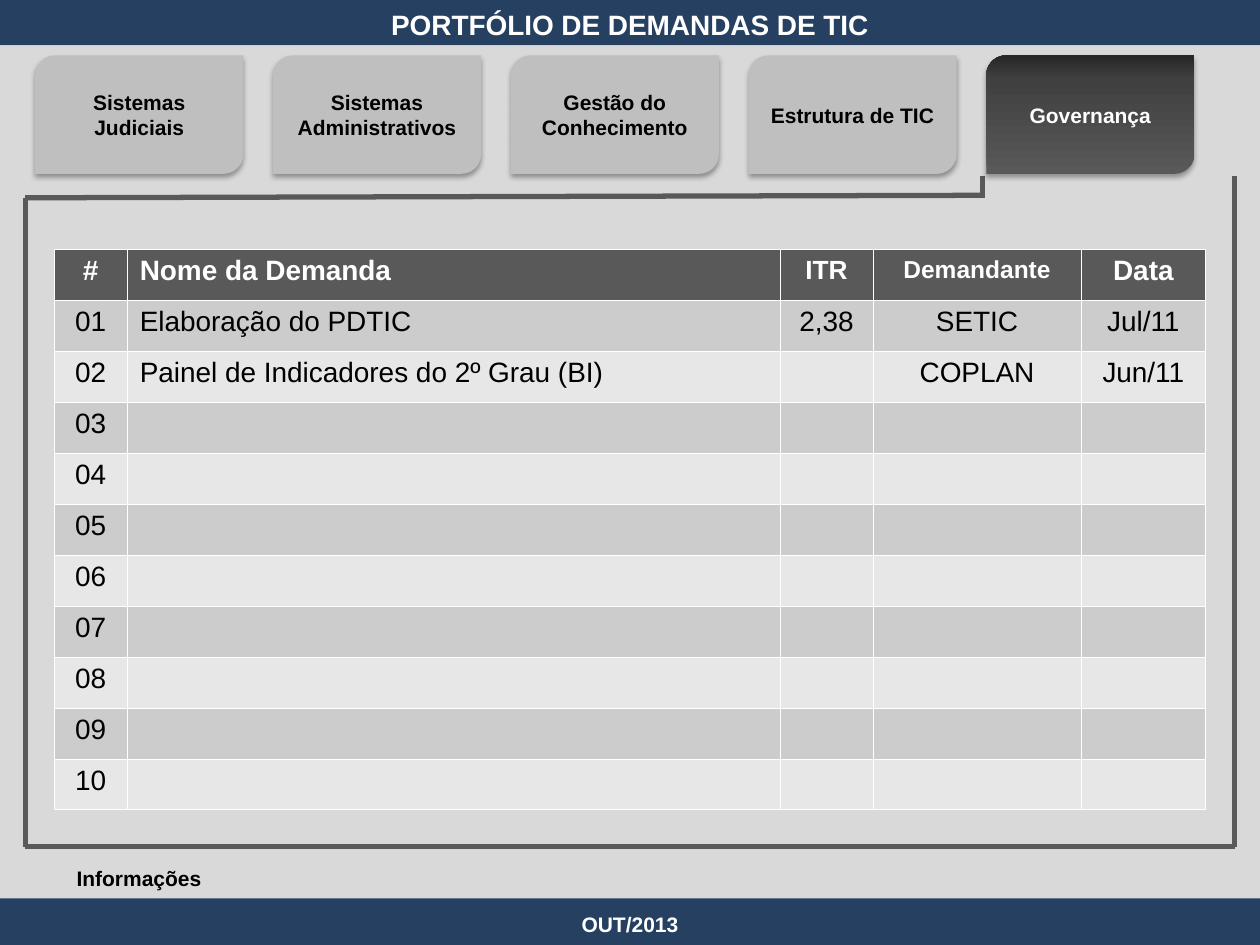
import collections
import pptx
import pptx.dml.color
import pptx.enum.shapes
import pptx.enum.text
import pptx.oxml
import pptx.oxml.ns
import pptx.util

RGBColor = pptx.dml.color.RGBColor
SHAPES = pptx.enum.shapes.MSO_SHAPE
LEFT = pptx.enum.text.PP_ALIGN.LEFT
CENTER = pptx.enum.text.PP_ALIGN.CENTER
TOP = pptx.enum.text.MSO_ANCHOR.TOP
MIDDLE = pptx.enum.text.MSO_ANCHOR.MIDDLE

NAVY = RGBColor(0x25, 0x40, 0x61)
PANEL_GREY = RGBColor(0xD9, 0xD9, 0xD9)
TAB_GREY = RGBColor(0xBF, 0xBF, 0xBF)
DARK_GREY = RGBColor(0x59, 0x59, 0x59)
DEEP_GREY = RGBColor(0x40, 0x40, 0x40)
NEAR_BLACK = RGBColor(0x26, 0x26, 0x26)
ODD_ROW = RGBColor(0xCC, 0xCC, 0xCC)
EVEN_ROW = RGBColor(0xE7, 0xE7, 0xE7)
WHITE = RGBColor(0xFF, 0xFF, 0xFF)
BLACK = RGBColor(0, 0, 0)

COLUMNS, ROWS = 100, 75
UNIT = pptx.util.Inches(10) / COLUMNS
Box = collections.namedtuple("Box", "left top width height")

TABS = ["Sistemas Judiciais", "Sistemas Administrativos", "Gestão do Conhecimento",
        "Estrutura de TIC", "Governança"]
HEADINGS = [("#", 16), ("Nome da Demanda", 16), ("ITR", 15), ("Demandante", 14), ("Data", 16)]
COLUMN_WIDTHS = [5.8, 51.8, 7.4, 16.5, 9.9]
DEMANDS = [["Elaboração do PDTIC", "2,38", "SETIC", "Jul/11"],
           ["Painel de Indicadores do 2º Grau (BI)", "", "COPLAN", "Jun/11"]]
DEMAND_ROWS = 10


def grid(units):
    """Turn grid units into a slide length."""
    return pptx.util.Emu(round(units * UNIT))


def xml(markup):
    """Parse one DrawingML element."""
    head, tail = markup.split(">", 1)
    slash = "/" if head.endswith("/") else ""
    return pptx.oxml.parse_xml(
        f"{head.rstrip('/')} {pptx.oxml.ns.nsdecls('a')}{slash}>{tail}")


def write(frame, text, size=12, color=BLACK, bold=True, align=CENTER):
    """Write one formatted paragraph into a text frame."""
    paragraph = frame.paragraphs[0]
    paragraph.alignment = align
    run = paragraph.add_run()
    run.text = text
    run.font.name = "Arial"
    run.font.size = pptx.util.Pt(size)
    run.font.bold = bold
    run.font.color.rgb = color


def fill_solid(target, color):
    """Fill a shape or a cell with one colour."""
    target.fill.solid()
    target.fill.fore_color.rgb = color


def add_block(slide, kind, box, color):
    """Add a flat shape without outline or shadow."""
    block = slide.shapes.add_shape(kind, *map(grid, box))
    fill_solid(block, color)
    block.line.fill.background()
    block.shadow.inherit = False
    return block


def set_band_text(frame, text, size):
    """Centre white text in a navy band, slightly below its middle."""
    frame.vertical_anchor = MIDDLE
    frame.margin_top, frame.margin_bottom = grid(0.4), 0
    write(frame, text, size=size, color=WHITE)


def place_title(slide, box):
    """Turn the title placeholder into the top band."""
    title = slide.shapes.title
    title.left, title.top, title.width, title.height = map(grid, box)
    fill_solid(title, NAVY)
    set_band_text(title.text_frame, "PORTFÓLIO DE DEMANDAS DE TIC", 16)


def place_footer(slide, box):
    """Draw the bottom band with its date."""
    band = add_block(slide, SHAPES.RECTANGLE, box, NAVY)
    set_band_text(band.text_frame, "OUT/2013", 12)


def place_frame(slide, box, gap_start, rise):
    """Draw the frame that opens at the top under the active tab."""
    left, top = box.left, box.top
    right, bottom = left + box.width, top + box.height
    notch = left + gap_start
    edges = [(left, top, left, bottom), (left, bottom, right, bottom),
             (right, bottom, right, top - rise), (notch, top - 0.2, left, top),
             (notch, top, notch, top - rise)]
    for edge in edges:
        line = slide.shapes.add_connector(
            pptx.enum.shapes.MSO_CONNECTOR.STRAIGHT, *map(grid, edge))
        line.line.color.rgb = DARK_GREY
        line.line.width = pptx.util.Pt(3)
        line._element.spPr.append(xml("<a:effectLst/>"))


def shade_active(tab):
    """Give the active tab its vertical dark gradient."""
    stops = "".join(f'<a:gs pos="{share * 1000}"><a:srgbClr val="{color}"/></a:gs>'
                    for share, color in [(0, DARK_GREY), (80, DEEP_GREY), (100, NEAR_BLACK)])
    properties = tab._element.spPr
    solid = properties.find(pptx.oxml.ns.qn("a:solidFill"))
    properties.replace(solid, xml(
        f'<a:gradFill rotWithShape="1"><a:gsLst>{stops}</a:gsLst>'
        '<a:lin ang="16200000" scaled="0"/></a:gradFill>'))


def cast_shadow(tab):
    """Give a tab a soft shadow below it."""
    effects = tab._element.spPr.find(pptx.oxml.ns.qn("a:effectLst"))
    effects.append(xml(
        f'<a:outerShdw blurRad="{pptx.util.Pt(3.1)}" dist="{pptx.util.Pt(1.8)}" dir="5400000" '
        'rotWithShape="0"><a:srgbClr val="000000"><a:alpha val="35000"/></a:srgbClr>'
        '</a:outerShdw>'))


def place_tabs(slide, box, gap, active):
    """Spread the tabs evenly across the box."""
    width = (box.width - gap * (len(TABS) - 1)) / len(TABS)
    for index, label in enumerate(TABS):
        spot = Box(box.left + index * (width + gap), box.top, width, box.height)
        tab = add_block(slide, SHAPES.ROUND_2_DIAG_RECTANGLE, spot, TAB_GREY)
        cast_shadow(tab)
        if label == active:
            shade_active(tab)
        tab.text_frame.word_wrap = True
        tab.text_frame.vertical_anchor = MIDDLE
        write(tab.text_frame, label, color=WHITE if label == active else BLACK)


def border(cell):
    """Draw thin white lines around a cell."""
    properties = cell._tc.get_or_add_tcPr()
    for index, side in enumerate(["lnL", "lnR", "lnT", "lnB"]):
        properties.insert(index, xml(
            f'<a:{side} w="{pptx.util.Pt(0.5)}"><a:solidFill><a:srgbClr val="{WHITE}"/>'
            f'</a:solidFill></a:{side}>'))


def place_table(slide, box):
    """Draw the demand table with its numbered rows."""
    table = slide.shapes.add_table(DEMAND_ROWS + 1, len(HEADINGS), *map(grid, box)).table
    for column, width in zip(table.columns, COLUMN_WIDTHS):
        column.width = grid(width)
    for row in table.rows:
        row.height = grid(box.height / (DEMAND_ROWS + 1))
    blank = [""] * (len(HEADINGS) - 1)
    for number in range(DEMAND_ROWS + 1):
        details = DEMANDS[number - 1] if 0 < number <= len(DEMANDS) else blank
        entries = [(text, 16) for text in [f"{number:02}", *details]] if number else HEADINGS
        shade = (ODD_ROW if number % 2 else EVEN_ROW) if number else DARK_GREY
        for index, (text, size) in enumerate(entries):
            cell = table.cell(number, index)
            fill_solid(cell, shade)
            border(cell)
            if text:
                write(cell.text_frame, text, size=size, bold=number == 0,
                      color=BLACK if number else WHITE, align=LEFT if index == 1 else CENTER)


def place_note(slide, box):
    """Write the information label under the frame."""
    note = slide.shapes.add_textbox(*map(grid, box)).text_frame
    note.word_wrap = True
    note.vertical_anchor = TOP
    write(note, "Informações", align=LEFT)


def main():
    """Build and save the slide."""
    deck = pptx.Presentation()
    deck.slide_width, deck.slide_height = grid(COLUMNS), grid(ROWS)
    slide = deck.slides.add_slide(deck.slide_layouts[5])
    place_title(slide, Box(0, -0.1, COLUMNS, 3.7))
    add_block(slide, SHAPES.RECTANGLE, Box(0, 3.6, COLUMNS, 68.5), PANEL_GREY)
    place_footer(slide, Box(0, 71.3, COLUMNS, 3.7))
    place_frame(slide, Box(2, 15.7, 96, 51.5), gap_start=76, rise=1.7)
    place_tabs(slide, Box(2.8, 4.4, 92, 9.4), gap=2.35, active="Governança")
    place_note(slide, Box(5.1, 68.2, 12.6, 3))
    place_table(slide, Box(4.3, 19.8, 91.4, 44.5))
    deck.save("out.pptx")


if __name__ == "__main__":
    main()
